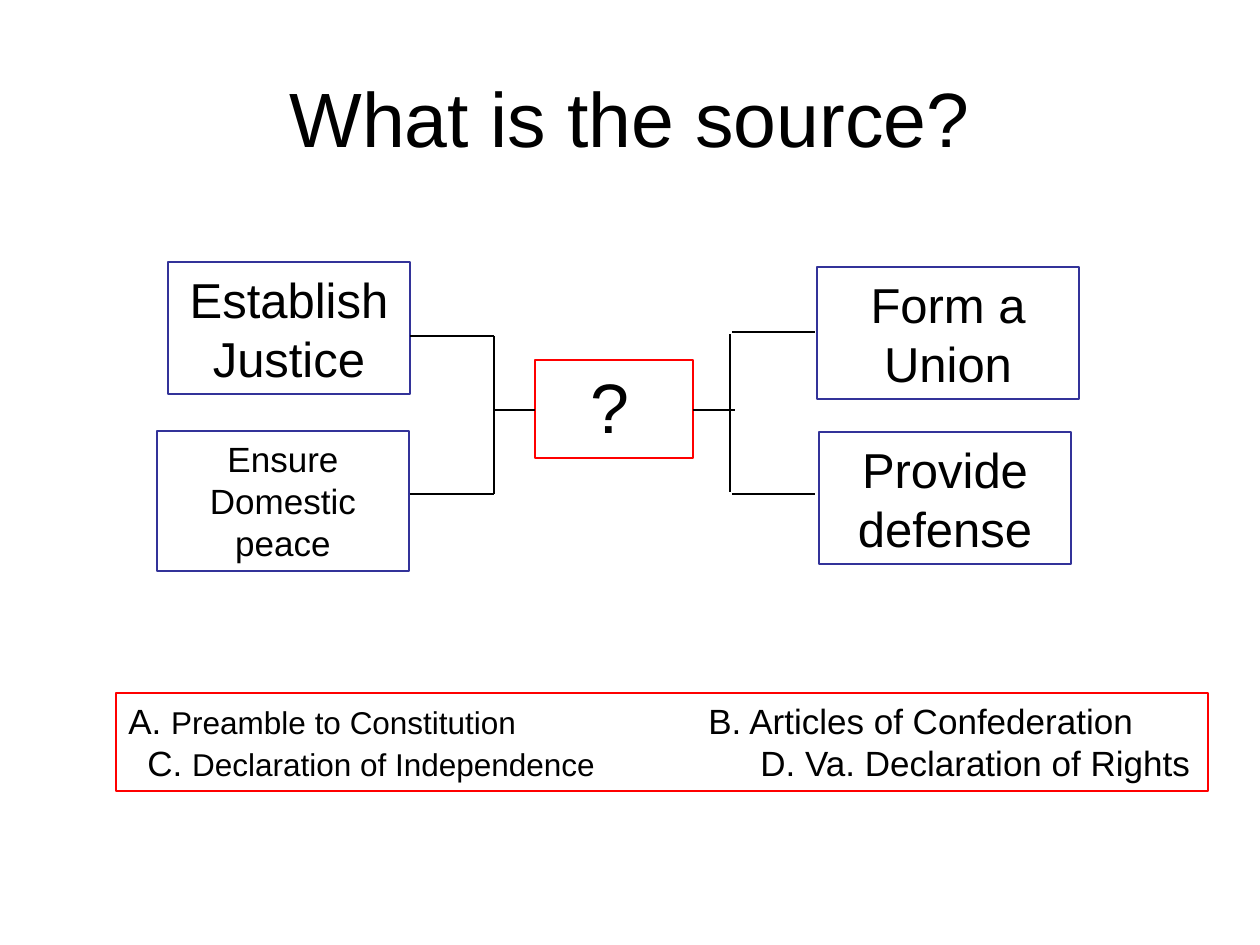
from lxml import etree
from pptx import Presentation
from pptx.dml.color import RGBColor
from pptx.enum.shapes import MSO_CONNECTOR, MSO_SHAPE
from pptx.enum.text import MSO_ANCHOR, PP_ALIGN
from pptx.oxml.ns import qn
from pptx.util import Pt

RECT = MSO_SHAPE.RECTANGLE
LINE = MSO_CONNECTOR.STRAIGHT
MID = MSO_ANCHOR.MIDDLE
LEFT, CENTER = PP_ALIGN.LEFT, PP_ALIGN.CENTER

THEME = {
    "font": "Arial",
    "ink": RGBColor(0, 0, 0),
    "blue": RGBColor(0x33, 0x33, 0x99),
    "red": RGBColor(0xFF, 0, 0),
    "title": 44, "mark": 40, "goal": 28, "text": 20, "small": 18,
    "line": 0.75,
}


def px(*vals):
    return [round(val * 914400 / 126) for val in vals]


def write(para, text, size, align=CENTER):
    para.alignment = align
    run = para.add_run()
    run.text = text
    look = {"name": THEME["font"], "size": Pt(THEME[size]), "bold": False}
    for key, val in look.items():
        setattr(run.font, key, val)
    run.font.color.rgb = THEME["ink"]


deck = Presentation()
deck.slide_width, deck.slide_height = px(1260, 945)
slide = deck.slides.add_slide(deck.slide_layouts[5])
shapes = slide.shapes

title = shapes.title
for key, val in zip(("left", "top", "width", "height"), px(63, 38, 1134, 158)):
    setattr(title, key, val)
title.text_frame.vertical_anchor = MID
write(title.text_frame.paragraphs[0], "What is the source?", "title")

boxes = [
    ("Provide defense", "goal", "blue", (819, 432, 252, 132)),
    ("Form a Union", "goal", "blue", (817, 267, 262, 132)),
    ("Establish Justice", "goal", "blue", (168, 262, 242, 132)),
    ("Ensure Domestic peace", "text", "blue", (157, 431, 252, 140)),
    ("", "mark", "red", (535, 360, 158, 98)),
    ("", "text", "red", (116, 693, 1092, 98)),
]
for text, size, color, area in boxes:
    box = shapes.add_shape(RECT, *px(*area))
    box.shadow.inherit = False
    box.fill.background()
    box.line.color.rgb = THEME[color]
    box.line.width = Pt(THEME["line"])
    frame = box.text_frame
    frame.word_wrap = True
    frame.vertical_anchor = MID
    if text:
        write(frame.paragraphs[0], text, size)

mark = shapes.add_textbox(*px(557, 357, 105, 97)).text_frame
mark.word_wrap = True
mark.vertical_anchor = MID
write(mark.paragraphs[0], "?", "mark")

rows = [
    ([580], [("A. ", "text"), ("Preamble to Constitution", "small"),
             ("\tB. Articles of Confederation", "text")]),
    ([19, 632], [("\tC. ", "text"), ("Declaration of Independence", "small"),
                 ("\tD. Va. Declaration of Rights", "text")]),
]
for row, (stops, parts) in enumerate(rows):
    para = frame.add_paragraph() if row else frame.paragraphs[0]
    for text, size in parts:
        write(para, text, size, LEFT)
    tabs = etree.SubElement(para._p.get_or_add_pPr(), qn("a:tabLst"))
    for stop in px(*stops):
        etree.SubElement(tabs, qn("a:tab"), pos=str(stop), algn="l")

links = [
    (410, 336, 494, 336), (410, 494, 494, 494), (494, 336, 494, 494),
    (732, 332, 815, 332), (732, 494, 815, 494), (730, 334, 730, 492),
    (494, 410, 535, 410), (735, 410, 693, 410),
]
for ends in links:
    link = shapes.add_connector(LINE, *px(*ends))
    link.line.color.rgb = THEME["ink"]
    link.line.width = Pt(THEME["line"])
    etree.SubElement(link._element.spPr, qn("a:effectLst"))

deck.save("out.pptx")
